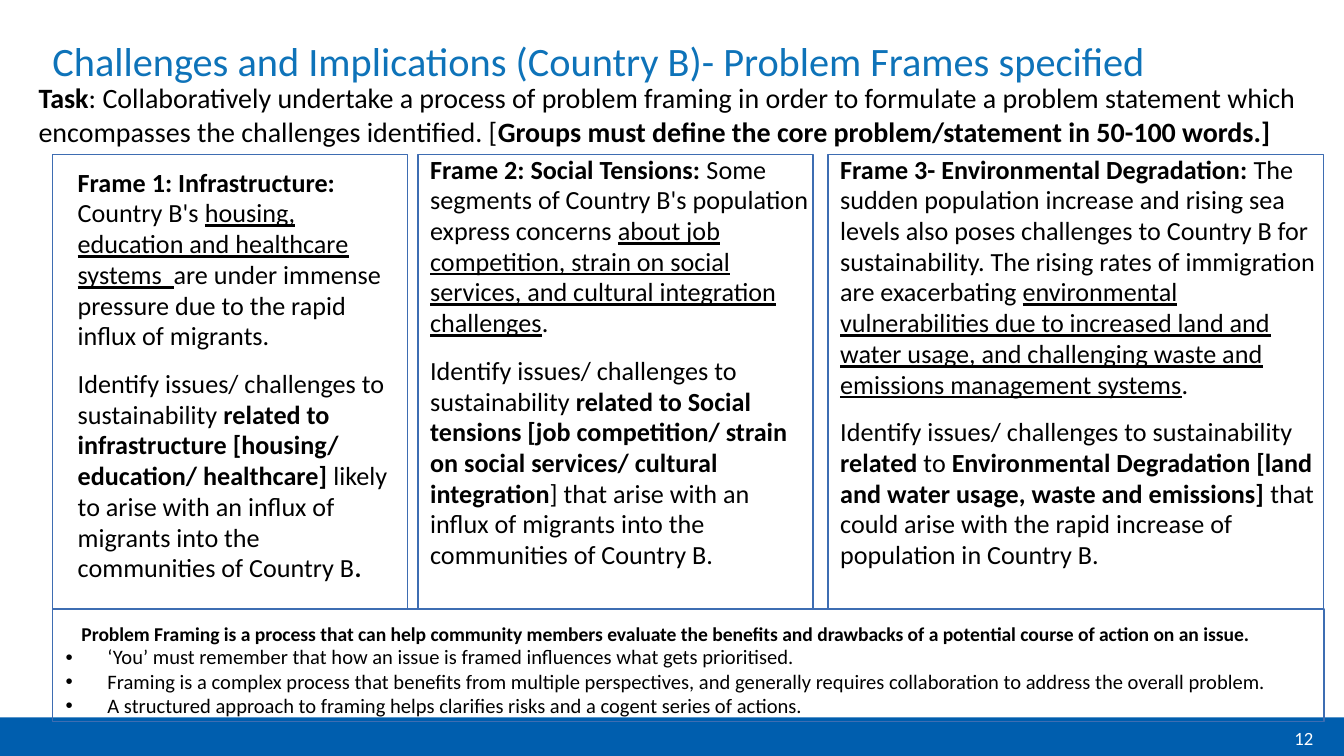
import pptx
import pptx.util
import pptx.dml.color
import pptx.enum.shapes
import pptx.enum.text
import pptx.oxml.ns
import lxml.etree

Cm, Pt = pptx.util.Cm, pptx.util.Pt
ALIGN, ANCHOR = pptx.enum.text.PP_ALIGN, pptx.enum.text.MSO_ANCHOR
COLORS = {"bar": "005EAE", "title": "0E73B9", "border": "3E6DB2",
          "text": "000000", "white": "FFFFFF"}
FONT = "Calibri"

FRAME_TOP, FRAME_HEIGHT = 2.92, 8.59
PANEL_LEFT, PANEL_WIDTH = 0.99, 24.03
INSET = 0.25

# Each run is (text, style): "b" is bold, "u" is underlined.
TASK = [("Task", "b"),
        (": Collaboratively undertake a process of problem framing in order to formulate "
         "a problem statement which encompasses the challenges identified. [", ""),
        ("Groups must define the core problem/statement in 50-100 words.]", "b")]

IDENTIFY = ("Identify issues/ challenges to sustainability ", "")

# left, width, inset, paragraphs
FRAMES = [
    (PANEL_LEFT, 6.71, INSET, [
        [("Frame 1: Infrastructure: ", "b"),
         ("Country B's ", ""),
         ("housing, education and healthcare systems  ", "u"),
         ("are under immense pressure due to the rapid influx of migrants.", "")],
        [IDENTIFY,
         ("related to infrastructure [housing/ education/ healthcare] ", "b"),
         ("likely to arise with an influx of migrants into the communities of Country B", ""),
         (".", "b")]]),
    (7.9, 7.47, 0, [
        [("Frame 2: Social Tensions:", "b"),
         (" Some segments of Country B's population express concerns ", ""),
         ("about job competition, strain on social services, and cultural integration "
          "challenges", "u"),
         (".", "")],
        [IDENTIFY,
         ("related to Social tensions [job competition/ strain on social services/ "
          "cultural integration", "b"),
         ("] that arise with an influx of migrants into the communities of Country B.", "")]]),
    (15.65, 9.37, 0, [
        [("Frame 3- Environmental Degradation:", "b"),
         (" The sudden population increase and rising sea levels also poses challenges to "
          "Country B for sustainability. The rising rates of immigration are exacerbating ", ""),
         ("environmental vulnerabilities due to increased land and water usage, and "
          "challenging waste and emissions management systems", "u"),
         (".", "")],
        [IDENTIFY,
         ("related", "b"),
         (" to ", ""),
         ("Environmental Degradation [land and water usage, waste and emissions] ", "b"),
         ("that could arise with the rapid increase of population in Country B.", "")]]),
]

FRAMING = ("Problem Framing is a process that can help community members evaluate the "
           "benefits and drawbacks of a potential course of action on an issue.")
REMINDERS = [
    "‘You’ must remember that how an issue is framed influences what gets prioritised.",
    "Framing is a complex process that benefits from multiple perspectives, and generally "
    "requires collaboration to address the overall problem.",
    "A structured approach to framing helps clarifies risks and a cogent series of actions.",
]


def rgb(name):
    return pptx.dml.color.RGBColor.from_string(COLORS[name])


def place(shape, left, top, width, height):
    shape.left, shape.top = Cm(left), Cm(top)
    shape.width, shape.height = Cm(width), Cm(height)


def prepare_frame(shape, inset=INSET, anchor=ANCHOR.TOP):
    frame = shape.text_frame
    frame.word_wrap = True
    frame.auto_size = pptx.enum.text.MSO_AUTO_SIZE.NONE
    frame.vertical_anchor = anchor
    frame.margin_left = frame.margin_right = Cm(inset)
    frame.margin_top = frame.margin_bottom = Cm(inset)
    return frame


def write(frame, runs, size, color="text", align=ALIGN.LEFT, before=0, after=0,
          spacing=1.0, margin=0, indent=0, bullet=None):
    """Fill the empty first paragraph, or add one, with (text, style) runs."""
    first = not frame.paragraphs[0].runs
    paragraph = frame.paragraphs[0] if first else frame.add_paragraph()
    paragraph.alignment = align
    paragraph.space_before = Pt(0 if first else before)
    paragraph.space_after = Pt(after)
    paragraph.line_spacing = spacing
    properties = paragraph._p.get_or_add_pPr()
    properties.set("marL", str(Cm(margin)))
    properties.set("indent", str(Cm(indent)))
    qn = pptx.oxml.ns.qn
    if bullet:
        lxml.etree.SubElement(properties, qn("a:buFont")).set("typeface", "Arial")
        lxml.etree.SubElement(properties, qn("a:buChar")).set("char", bullet)
    else:
        lxml.etree.SubElement(properties, qn("a:buNone"))
    for text, style in runs:
        run = paragraph.add_run()
        run.text = text
        run.font.name, run.font.size = FONT, Pt(size)
        run.font.color.rgb = rgb(color)
        run.font.bold = "b" in style
        run.font.underline = "u" in style


def outline(shape):
    shape.line.color.rgb = rgb("border")
    shape.line.width = Pt(0.75)


def add_rectangle(slide, *box):
    shape = slide.shapes.add_shape(pptx.enum.shapes.MSO_SHAPE.RECTANGLE, *map(Cm, box))
    shape.shadow.inherit = False
    return shape


def add_footer_bar(slide):
    bar = add_rectangle(slide, 0, 13.56, 25.4, 0.76)
    bar.fill.solid()
    bar.fill.fore_color.rgb = rgb("bar")
    bar.line.fill.background()
    bar.element.getparent().insert(2, bar.element)  # behind the placeholders


def add_text(slide, box, runs, size, inset=INSET, anchor=ANCHOR.TOP, **text_format):
    label = slide.shapes.add_textbox(*map(Cm, box))
    frame = prepare_frame(label, inset, anchor)
    write(frame, runs, size, **text_format)
    return frame


def add_problem_frame(slide, left, width, inset, paragraphs):
    panel = add_rectangle(slide, left, FRAME_TOP, width, FRAME_HEIGHT)
    panel.fill.background()
    outline(panel)
    frame = prepare_frame(panel, inset)
    for runs in paragraphs:
        write(frame, runs, 14, margin=0.23, before=4.5, after=4.5, spacing=0.98)


def fill_title(title):
    place(title, 0.74, 0.58, 23.24, 1.27)
    frame = prepare_frame(title, anchor=ANCHOR.BOTTOM)
    write(frame, [("Challenges and Implications (Country B)- Problem Frames specified", "")],
          21.6, color="title")


def fill_reminders(body):
    place(body, PANEL_LEFT, FRAME_TOP + FRAME_HEIGHT, PANEL_WIDTH, 2.13)
    outline(body)
    frame = prepare_frame(body)
    write(frame, [(FRAMING, "b")], 10.5, margin=0.3)
    for reminder in REMINDERS:
        write(frame, [(reminder, "")], 11, margin=0.79, indent=-0.79, bullet="•",
              spacing=0.98)


def main():
    deck = pptx.Presentation()
    deck.slide_width, deck.slide_height = Cm(25.4), Cm(14.29)
    slide = deck.slides.add_slide(deck.slide_layouts[1])
    add_footer_bar(slide)
    fill_title(slide.shapes.title)
    fill_reminders(slide.placeholders[1])
    task = add_text(slide, (0.48, 1.4, 24.61, 1.55), TASK, 15)
    task.margin_top = task.margin_bottom = Cm(0.13)
    for problem_frame in FRAMES:
        add_problem_frame(slide, *problem_frame)
    add_text(slide, (23.27, 13.64, 1.8, 0.64), [("12", "")], 10, anchor=ANCHOR.MIDDLE,
             color="white", align=ALIGN.RIGHT)
    deck.save("out.pptx")


if __name__ == "__main__":
    main()
